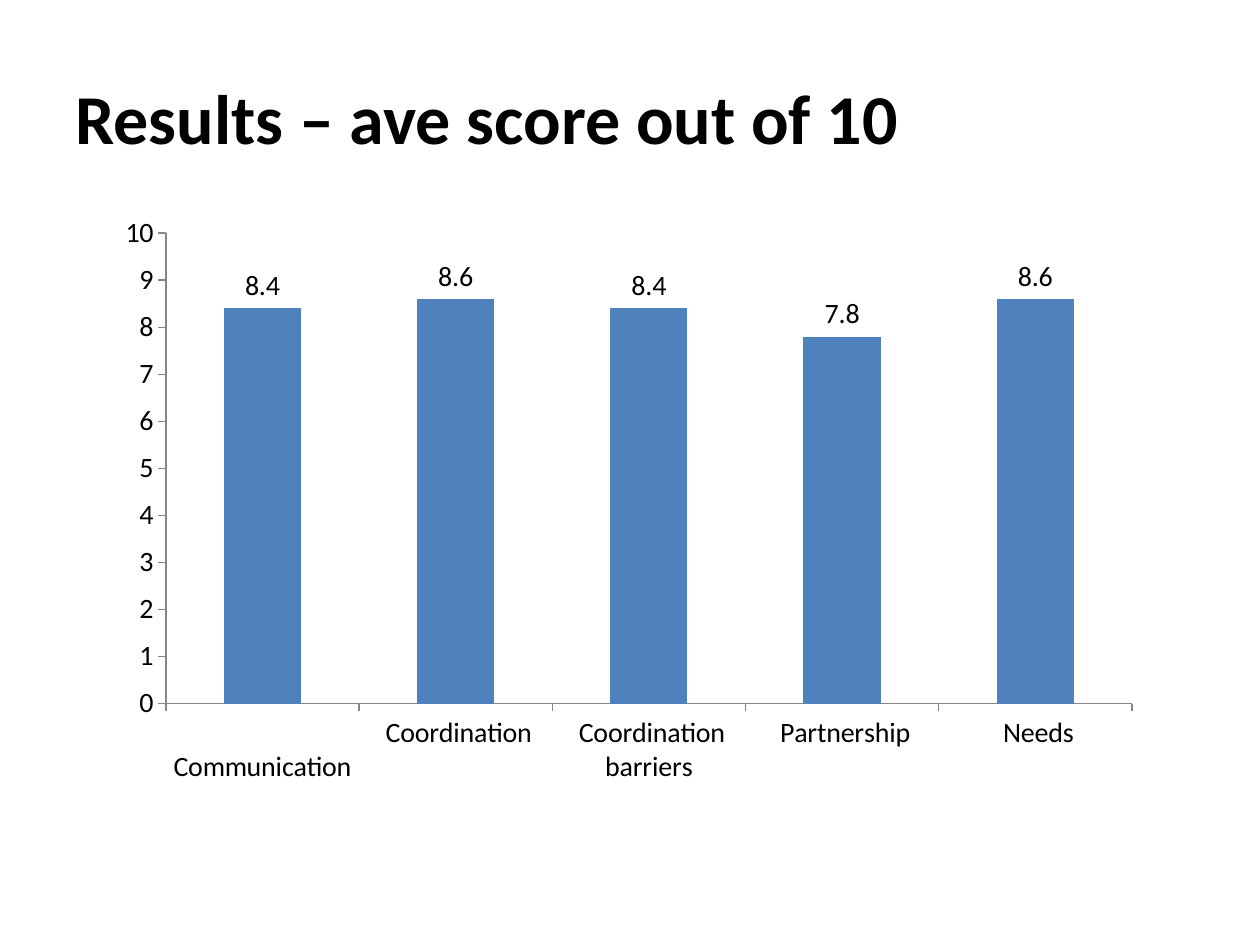
from pptx import Presentation
from pptx.chart.data import CategoryChartData
from pptx.dml.color import RGBColor
from pptx.enum.chart import XL_CHART_TYPE, XL_LABEL_POSITION, XL_TICK_MARK
from pptx.enum.text import MSO_ANCHOR
from pptx.util import Inches, Pt

BLACK = RGBColor(0x00, 0x00, 0x00)
BLUE = RGBColor(0x4F, 0x81, 0xBD)
GRAY = RGBColor(0x86, 0x86, 0x86)

SCORES = {
    " Communication": 8.4,
    " Coordination": 8.6,
    " Coordination barriers": 8.4,
    " Partnership": 7.8,
    " Needs": 8.6,
}


class Deck:
    face = "Calibri"

    def __init__(self, slide):
        self.slide = slide

    def style(self, font, size, bold=False):
        font.name = self.face
        font.size = Pt(size)
        font.bold = bold
        font.color.rgb = BLACK

    def title(self, text, left, top, width, height):
        box = self.slide.shapes.add_textbox(
            Inches(left), Inches(top), Inches(width), Inches(height))
        frame = box.text_frame
        frame.word_wrap = True
        frame.vertical_anchor = MSO_ANCHOR.MIDDLE
        frame.text = text
        self.style(frame.paragraphs[0].font, 40, bold=True)

    def bars(self, scores, left, top, width, height):
        data = CategoryChartData(number_format="0.0")
        data.categories = list(scores)
        data.add_series("Series 1", list(scores.values()))
        chart = self.slide.shapes.add_chart(
            XL_CHART_TYPE.COLUMN_CLUSTERED, Inches(left), Inches(top),
            Inches(width), Inches(height), data).chart
        chart.has_legend = False
        chart.has_title = False
        self.style(chart.font, 16)

        # Axes
        for axis in (chart.category_axis, chart.value_axis):
            axis.has_major_gridlines = False
            axis.major_tick_mark = XL_TICK_MARK.OUTSIDE
            axis.minor_tick_mark = XL_TICK_MARK.NONE
            axis.format.line.color.rgb = GRAY
            axis.format.line.width = Pt(0.75)
        scale = chart.value_axis
        scale.minimum_scale = 0
        scale.maximum_scale = 10
        scale.major_unit = 1
        scale.tick_labels.number_format = "0"
        scale.tick_labels.number_format_is_linked = False

        # Columns and their labels
        plot = chart.plots[0]
        plot.gap_width = 150
        plot.vary_by_categories = False
        fill = plot.series[0].format.fill
        fill.solid()
        fill.fore_color.rgb = BLUE
        plot.has_data_labels = True
        labels = plot.data_labels
        labels.show_value = True
        labels.number_format = "0.0"
        labels.number_format_is_linked = False
        labels.position = XL_LABEL_POSITION.OUTSIDE_END
        self.style(labels.font, 16)


def main():
    show = Presentation()
    show.slide_width = Inches(10)
    show.slide_height = Inches(7.5)
    deck = Deck(show.slides.add_slide(show.slide_layouts[6]))

    # Heading
    deck.title("Results – ave score out of 10", 0.5, 0.3, 9, 1.25)

    # Score chart
    deck.bars(SCORES, 0.83, 1.62, 8.32, 4.7)

    show.save("out.pptx")


if __name__ == "__main__":
    main()
